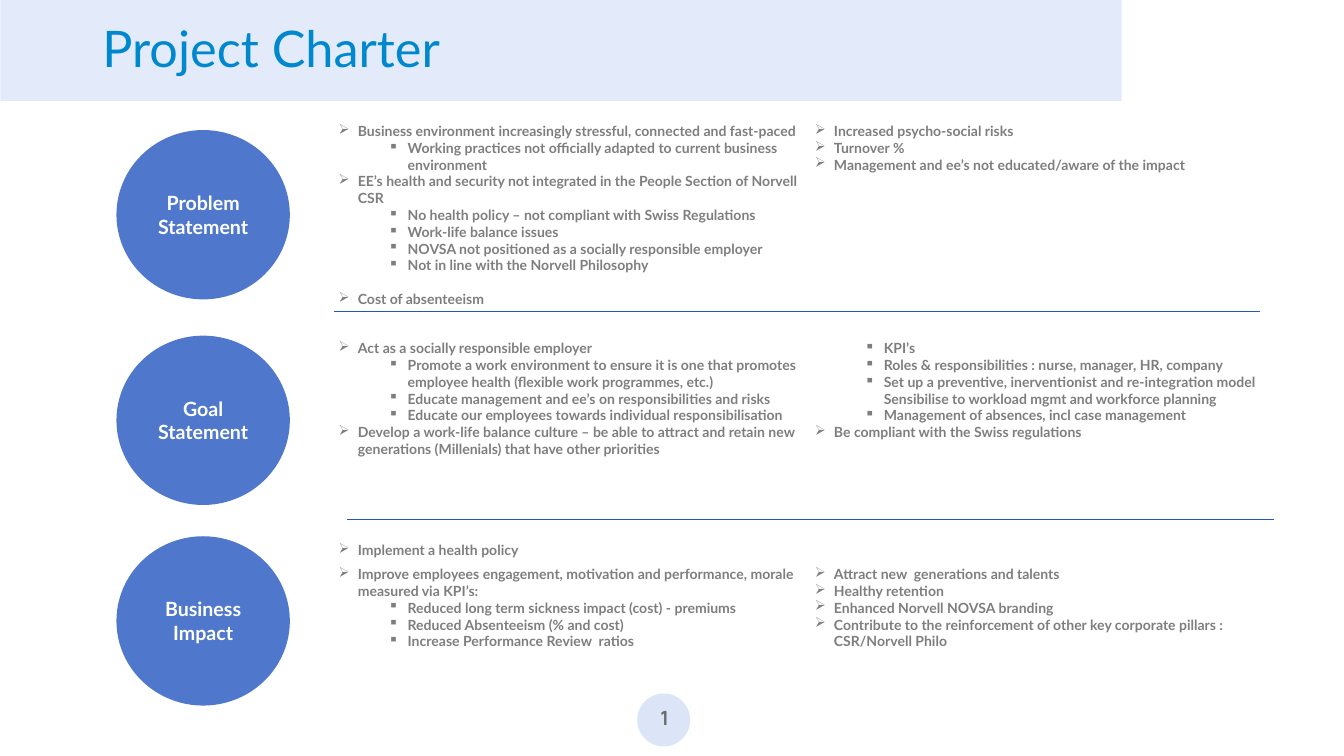
from lxml.etree import SubElement
from pptx import Presentation
from pptx.dml.color import RGBColor
from pptx.enum.shapes import MSO_CONNECTOR, MSO_SHAPE
from pptx.enum.text import MSO_ANCHOR, PP_ALIGN
from pptx.oxml.ns import qn
from pptx.util import Pt

BLUE = RGBColor(0x23, 0x56, 0xBE)
PALE = RGBColor(0xDC, 0xE5, 0xF8)
TITLE_BLUE = RGBColor(0x00, 0x88, 0xCE)
GREY = RGBColor(0x7E, 0x7E, 0x7E)
NUMBER_GREY = RGBColor(0x6B, 0x6B, 0x6B)
WHITE = RGBColor(0xFF, 0xFF, 0xFF)

# Content: each section has a circle label and two columns of
# (level, text, lines of space before)
SECTIONS = [
    {"label": ["Problem Statement"], "circle_top": 185.8, "text_top": 171.4, "columns": [
        [(0, "Business environment increasingly stressful, connected and fast-paced", 0),
         (1, "Working practices not officially adapted to current business environment", 0),
         (0, "EE’s health and security not integrated in the People Section of Norvell CSR", 0),
         (1, "No health policy – not compliant with Swiss Regulations", 0),
         (1, "Work-life balance issues", 0),
         (1, "NOVSA not positioned as a socially responsible employer", 0),
         (1, "Not in line with the Norvell Philosophy", 0),
         (0, "Cost of absenteeism", 1)],
        [(0, "Increased psycho-social risks", 0),
         (0, "Turnover %", 0),
         (0, "Management and ee’s not educated/aware of the impact", 0)]]},
    {"label": ["Goal", "Statement"], "circle_top": 479.5, "text_top": 481.7, "columns": [
        [(0, "Act as a socially responsible employer", 0),
         (1, "Promote a work environment to ensure it is one that promotes "
             "employee health (flexible work programmes, etc.)", 0),
         (1, "Educate management and ee’s on responsibilities and risks", 0),
         (1, "Educate our employees towards individual responsibilisation", 0),
         (0, "Develop a work-life balance culture – be able to attract and retain new "
             "generations (Millenials) that have other priorities", 0),
         (0, "Implement a health policy", 5)],
        [(1, "KPI’s", 0),
         (1, "Roles & responsibilities : nurse, manager, HR, company", 0),
         (1, "Set up a preventive, inerventionist and re-integration model "
             "Sensibilise to workload mgmt and workforce planning", 0),
         (1, "Management of absences, incl case management", 0),
         (0, "Be compliant with the Swiss regulations", 0)]]},
    {"label": ["Business Impact"], "circle_top": 766.1, "text_top": 804.5, "columns": [
        [(0, "Improve employees engagement, motivation and performance, morale "
             "measured via KPI’s:", 0),
         (1, "Reduced long term sickness impact (cost) - premiums", 0),
         (1, "Reduced Absenteeism (% and cost)", 0),
         (1, "Increase Performance Review  ratios", 0)],
        [(0, "Attract new  generations and talents", 0),
         (0, "Healthy retention", 0),
         (0, "Enhanced Norvell NOVSA branding", 0),
         (0, "Contribute to the reinforcement of other key corporate pillars : "
             "CSR/Norvell Philo", 0)]]},
]
DIVIDERS = [(476.6, 444.2), (496.1, 741.6)]  # left, height on the page
DIVIDER_WIDTH = 1323.4
LEVELS = [("➢", 27.4), ("▪", 98.6)]  # bullet, left margin
HANGING = 27.4
LINE_HEIGHT = 24
COLUMN_LEFT, COLUMN_STEP, INSET = 476.6, 680, 7.2

deck = Presentation()
deck.slide_width, deck.slide_height = Pt(1919.52), Pt(1080)
page = deck.slides.add_slide(deck.slide_layouts[6])


def add_filled(kind, left, top, width, height, colour, opacity=100):
    shape = page.shapes.add_shape(kind, Pt(left), Pt(top), Pt(width), Pt(height))
    shape.shadow.inherit = False
    shape.fill.solid()
    shape.fill.fore_color.rgb = colour
    shape.line.fill.background()
    if opacity < 100:
        tint = shape.fill._xPr.find(qn("a:solidFill"))[0]
        SubElement(tint, qn("a:alpha"), val=str(opacity * 1000))
    return shape


def set_frame(box, across, down, anchor, wrap=True):
    frame = box.text_frame
    frame.word_wrap = wrap
    frame.vertical_anchor = anchor
    frame.margin_left = frame.margin_right = Pt(across)
    frame.margin_top = frame.margin_bottom = Pt(down)
    return frame


def add_box(left, top, width, height):
    return page.shapes.add_textbox(Pt(left), Pt(top), Pt(width), Pt(height))


def next_paragraph(frame, index):
    return frame.add_paragraph() if index else frame.paragraphs[0]


def add_span(para, text, size, colour, bold=True, font="Lato"):
    span = para.add_run()
    span.text = text
    span.font.name, span.font.size, span.font.bold = font, Pt(size), bold
    span.font.color.rgb = colour


def add_bullet(para, level):
    mark, margin = LEVELS[level]
    para.level = level
    properties = para._p.get_or_add_pPr()
    properties.set("marL", str(Pt(margin)))
    properties.set("indent", str(-Pt(HANGING)))
    SubElement(properties, qn("a:buChar"), char=mark)


# Title band and page number
add_filled(MSO_SHAPE.RECTANGLE, 0.7, 0, 1601.3, 144, PALE, 80)
add_filled(MSO_SHAPE.OVAL, 910.1, 990.7, 75.6, 75.6, PALE)
number = set_frame(add_box(917.3, 1000.8, 64, 48.2), 14.4, 7.2, MSO_ANCHOR.TOP, False)
number.paragraphs[0].alignment = PP_ALIGN.CENTER
add_span(number.paragraphs[0], "1", 28, NUMBER_GREY, font="Manrope")

# Sections: circle and two text columns
for section in SECTIONS:
    circle = add_filled(MSO_SHAPE.OVAL, 166.3, section["circle_top"], 247.7, 241.9, BLUE, 80)
    frame = set_frame(circle, 19.4, 9.4, MSO_ANCHOR.MIDDLE)
    for index, text in enumerate(section["label"]):
        para = next_paragraph(frame, index)
        para.alignment = PP_ALIGN.CENTER
        add_span(para, text, 28, WHITE)

    for column, items in enumerate(section["columns"]):
        box = add_box(COLUMN_LEFT + column * COLUMN_STEP, section["text_top"],
                      COLUMN_STEP + 2 * INSET, 270)
        frame = set_frame(box, INSET, INSET / 2, MSO_ANCHOR.TOP)
        for index, (level, text, gap) in enumerate(items):
            para = next_paragraph(frame, index)
            add_bullet(para, level)
            if gap:
                para.space_before = Pt(gap * LINE_HEIGHT)
            add_span(para, text, 20, GREY)

# Dividers between sections
for left, top in DIVIDERS:
    divider = page.shapes.add_connector(
        MSO_CONNECTOR.STRAIGHT, Pt(left), Pt(top), Pt(left + DIVIDER_WIDTH), Pt(top))
    divider.line.color.rgb = BLUE
    divider.line.width = Pt(0.5)
    SubElement(divider._element.spPr, qn("a:effectLst"))

# Title
title = set_frame(add_box(131.8, 1.4, 1470.2, 142.6), 14.4, 7.2, MSO_ANCHOR.MIDDLE)
title.paragraphs[0].line_spacing = 0.9
add_span(title.paragraphs[0], "Project Charter", 72, TITLE_BLUE, bold=False)

deck.save("out.pptx")
